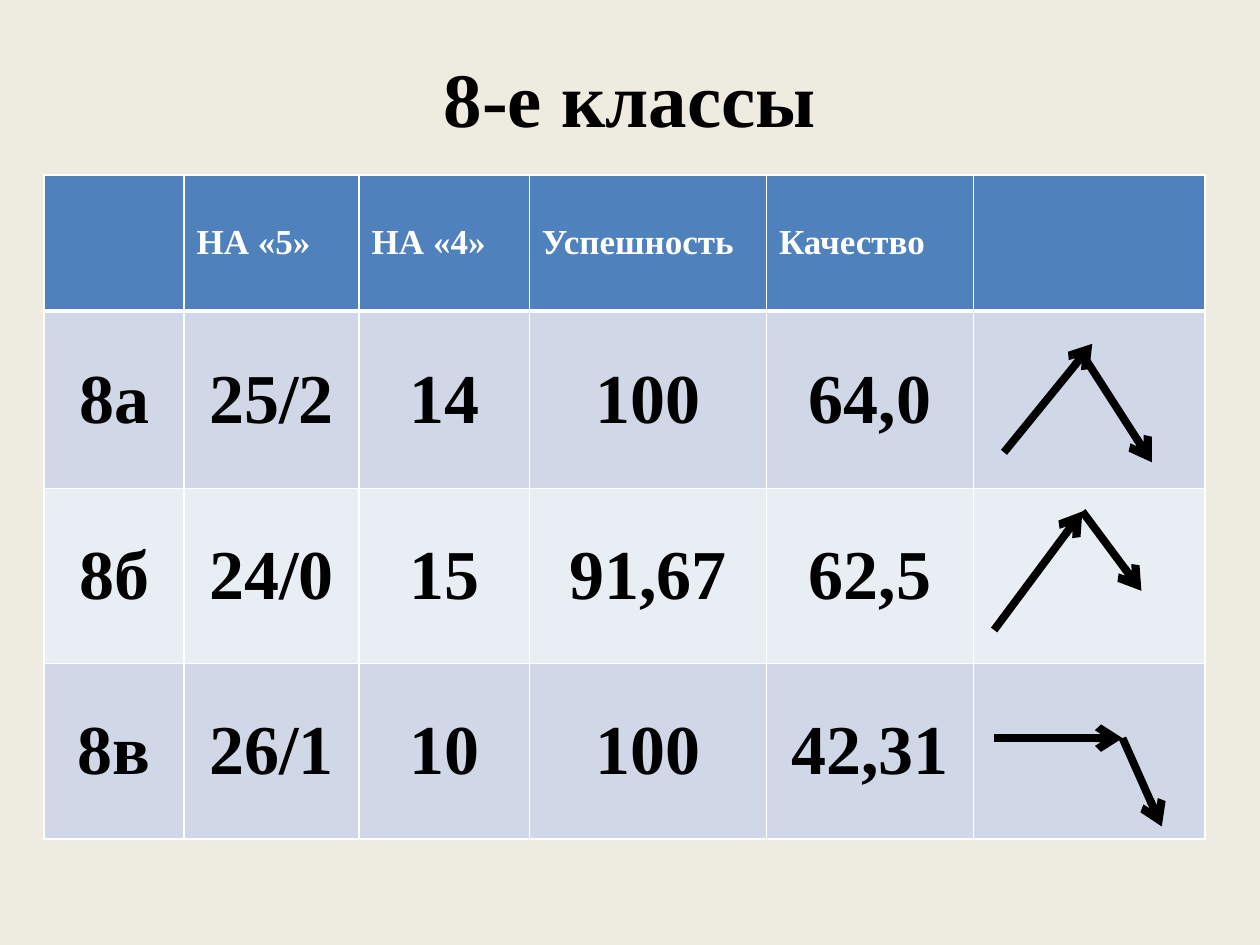
from lxml.etree import SubElement
from pptx import Presentation
from pptx.dml.color import RGBColor
from pptx.enum.shapes import MSO_CONNECTOR
from pptx.enum.text import MSO_ANCHOR, PP_ALIGN
from pptx.oxml.ns import qn
from pptx.util import Cm, Pt

FONT = "Times New Roman"
HEADER_FILL, BAND_FILLS = "4F81BD", ("D0D8E8", "E9EDF4")
COLS = (2.82, 3.53, 3.43, 4.78, 4.17, 4.67)
ROWS = (2.74, 3.58, 3.53, 3.53)
DATA = (
    ("", "НА «5»", "НА «4»", "Успешность", "Качество", ""),
    ("8а", "25/2", "14", "100", "64,0", ""),
    ("8б", "24/0", "15", "91,67", "62,5", ""),
    ("8в", "26/1", "10", "100", "42,31", ""),
)
# Two arrows per class, (x1, y1, x2, y2) in cm from the corner of its trend cell
TRENDS = (
    ((0.62, 2.85, 2.4, 0.66), (2.2, 0.87, 3.6, 3.05)),
    ((0.42, 2.85, 2.2, 0.46), (2.2, 0.46, 3.39, 2.06)),
    ((0.42, 1.5, 3.01, 1.5), (3.01, 1.5, 3.8, 3.28)),
)


def rgb(value):
    return RGBColor.from_string(value)


def write(tf, text, size, color, align):
    p = tf.paragraphs[0]
    p.alignment = align
    r = p.add_run()
    r.text = text
    for name, value in {"name": FONT, "size": Pt(size), "bold": True}.items():
        setattr(r.font, name, value)
    r.font.color.rgb = rgb(color)


def set_borders(cell, widths):
    tc_pr = cell._tc.get_or_add_tcPr()
    for side, width in widths.items():
        ln = SubElement(tc_pr, qn(f"a:ln{side}"), w=str(Pt(width)))
        fill = SubElement(ln, qn("a:solidFill"))
        SubElement(fill, qn("a:srgbClr"), val="FFFFFF")


def add_title(s, x, y, w, h):
    sp = s.shapes.title
    box = {"left": Cm(x), "top": Cm(y), "width": Cm(w), "height": Cm(h)}
    for name, value in box.items():
        setattr(sp, name, value)
    sp.text_frame.vertical_anchor = MSO_ANCHOR.MIDDLE
    write(sp.text_frame, "8-е классы", 44, "000000", PP_ALIGN.CENTER)


def add_grades(s, x, y):
    frame = s.shapes.add_table(len(ROWS), len(COLS), Cm(x), Cm(y),
                               Cm(sum(COLS)), Cm(sum(ROWS)))
    table = frame.table
    table.first_row = table.horz_banding = False
    for column, width in zip(table.columns, COLS):
        column.width = Cm(width)
    for row, height in zip(table.rows, ROWS):
        row.height = Cm(height)

    for i, texts in enumerate(DATA):
        header = i == 0
        fill = HEADER_FILL if header else BAND_FILLS[(i - 1) % 2]
        style = (20, "FFFFFF", PP_ALIGN.LEFT) if header else (40, "000000", PP_ALIGN.CENTER)
        for j, text in enumerate(texts):
            cell = table.cell(i, j)
            cell.vertical_anchor = MSO_ANCHOR.MIDDLE
            # Thick rule between the header and the first class
            set_borders(cell, {"L": 1, "R": 1, "T": 3 if i == 1 else 1,
                               "B": 3 if header else 1})
            cell.fill.solid()
            cell.fill.fore_color.rgb = rgb(fill)
            if text:
                write(cell.text_frame, text, *style)


def add_arrow(s, x1, y1, x2, y2):
    line = s.shapes.add_connector(MSO_CONNECTOR.STRAIGHT, Cm(x1), Cm(y1), Cm(x2), Cm(y2))
    line.line.color.rgb = rgb("000000")
    line.line.width = Pt(4.5)
    SubElement(line.line._get_or_add_ln(), qn("a:tailEnd"), type="arrow")
    SubElement(line._element.spPr, qn("a:effectLst"))


def add_trends(s, x, y):
    left = x + sum(COLS[:-1])
    for i, arrows in enumerate(TRENDS, 1):
        top = y + sum(ROWS[:i])
        for x1, y1, x2, y2 in arrows:
            add_arrow(s, left + x1, top + y1, left + x2, top + y2)


def main():
    prs = Presentation()
    prs.slide_width, prs.slide_height = Cm(25.4), Cm(19.05)
    s = prs.slides.add_slide(prs.slide_layouts[5])
    s.background.fill.solid()
    s.background.fill.fore_color.rgb = rgb("EEECE1")

    add_title(s, 1.27, 0.76, 22.86, 2.36)
    add_grades(s, 0.89, 3.53)
    add_trends(s, 0.89, 3.53)
    prs.save("out.pptx")


if __name__ == "__main__":
    main()
